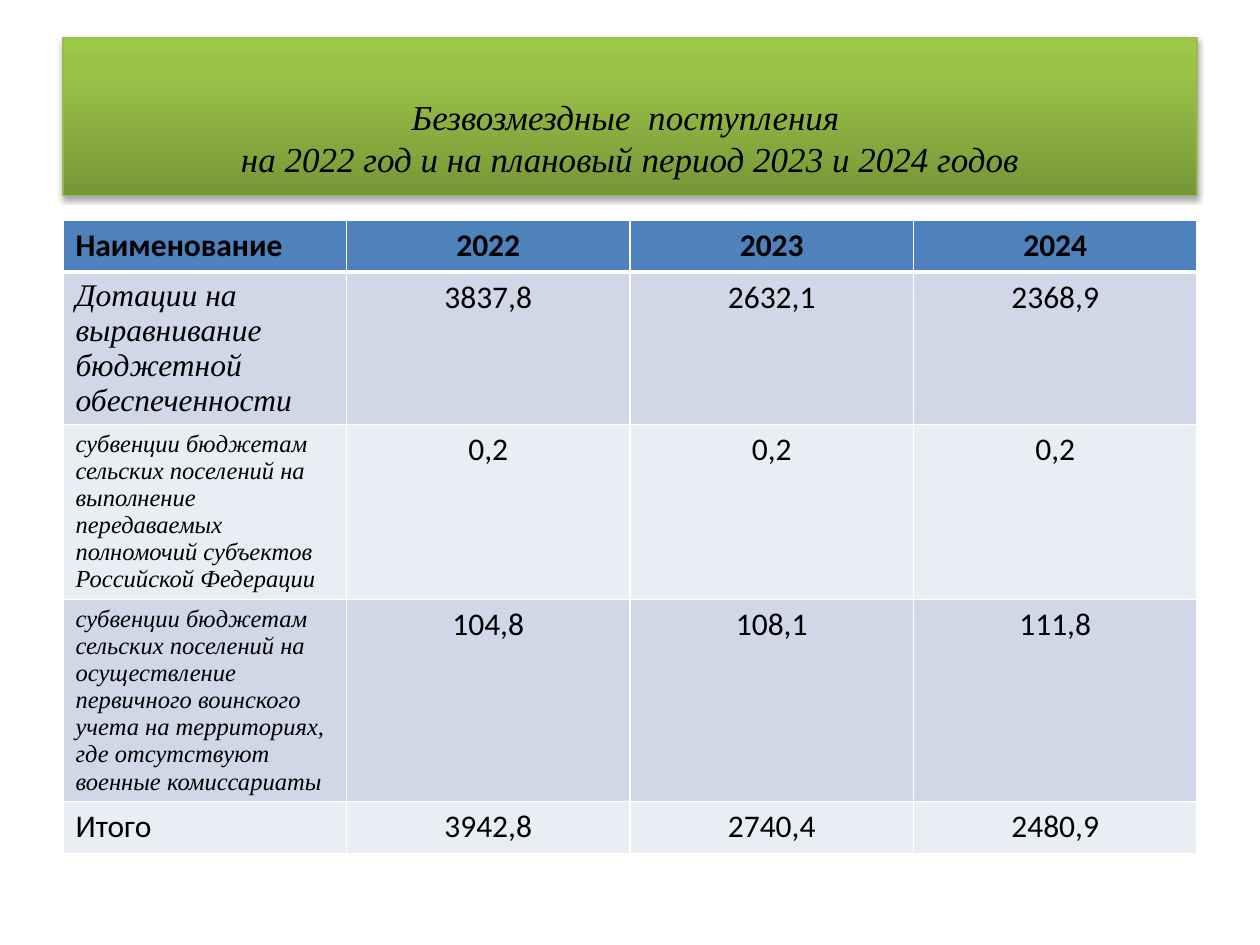
from lxml import etree
from pptx import Presentation
from pptx.dml.color import RGBColor
from pptx.enum.text import MSO_ANCHOR, PP_ALIGN
from pptx.oxml import parse_xml
from pptx.oxml.ns import qn
from pptx.util import Inches, Pt

CENTER = PP_ALIGN.CENTER
LEFT = PP_ALIGN.LEFT
MIDDLE = MSO_ANCHOR.MIDDLE
NS = 'xmlns:a="http://schemas.openxmlformats.org/drawingml/2006/main"'
SERIF = "Times New Roman"
SANS = "Calibri"
COLORS = {
    "ink": "000000", "white": "FFFFFF", "edge": "98B955",
    "low": "779737", "mid": "9BC348", "high": "9DC746",
    "head": "4F81BD", "odd": "D0D8E8", "even": "E9EDF4",
}
TITLE = ["Безвозмездные  поступления ",
         "на 2022 год и на плановый период 2023 и 2024 годов"]
ROWS = [
    (0.41, SANS, 18, ["Наименование", "2022", "2023", "2024"]),
    (1.19, SERIF, 18, ["Дотации на выравнивание бюджетной обеспеченности",
                       "3837,8", "2632,1", "2368,9"]),
    (1.39, SERIF, 14, ["субвенции бюджетам сельских поселений на выполнение "
                       "передаваемых полномочий субъектов Российской Федерации",
                       "0,2", "0,2", "0,2"]),
    (1.6, SERIF, 14, ["субвенции бюджетам сельских поселений на осуществление "
                      "первичного воинского учета на территориях, "
                      "где отсутствуют военные комиссариаты",
                      "104,8", "108,1", "111,8"]),
    (0.41, SANS, 18, ["Итого", "3942,8", "2740,4", "2480,9"]),
]


class Deck:
    """Holds the style and the current slide."""

    def __init__(self):
        self.file = Presentation()
        self.file.slide_width = Inches(10)
        self.file.slide_height = Inches(7.5)
        self.slide = self.file.slides.add_slide(self.file.slide_layouts[5])

    def run(self, para, text, font, size, bold=False, italic=False):
        run = para.add_run()
        run.text = text
        run.font.name = font
        run.font.size = Pt(size)
        run.font.bold = bold
        run.font.italic = italic
        run.font.color.rgb = RGBColor.from_string(COLORS["ink"])

    def title(self, lines, left, top, width, height):
        shape = self.slide.shapes.title
        shape.left, shape.top = Inches(left), Inches(top)
        shape.width, shape.height = Inches(width), Inches(height)
        stops = "".join(
            f'<a:gs pos="{pos}"><a:srgbClr val="{COLORS[name]}"/></a:gs>'
            for pos, name in [(0, "low"), (80000, "mid"), (100000, "high")])
        props = shape.element.spPr
        props.append(parse_xml(
            f'<a:gradFill {NS} rotWithShape="1"><a:gsLst>{stops}</a:gsLst>'
            '<a:lin ang="16200000" scaled="0"/></a:gradFill>'))
        shape.line.color.rgb = RGBColor.from_string(COLORS["edge"])
        shape.line.width = Pt(0.75)
        props.append(parse_xml(
            f'<a:effectLst {NS}><a:outerShdw blurRad="39370" dist="22860" '
            f'dir="5400000" rotWithShape="0"><a:srgbClr val="{COLORS["ink"]}">'
            '<a:alpha val="35000"/></a:srgbClr></a:outerShdw></a:effectLst>'))
        frame = shape.text_frame
        frame.word_wrap = True
        frame.vertical_anchor = MIDDLE
        frame.margin_top = Inches(0.38)
        para = frame.paragraphs[0]
        para.alignment = CENTER
        for i, line in enumerate(lines):
            if i:
                para.add_line_break()
            self.run(para, line, SERIF, 20, italic=True)

    def border(self, cell, side, width):
        props = cell._tc.get_or_add_tcPr()
        line = etree.SubElement(props, qn(f"a:ln{side}"), w=str(Pt(width)))
        fill = etree.SubElement(line, qn("a:solidFill"))
        etree.SubElement(fill, qn("a:srgbClr"), val=COLORS["white"])

    def cell(self, cell, text, fill, align, font, size, head):
        for side in "LRTB":
            self.border(cell, side, 3 if head and side == "B" else 1)
        cell.fill.solid()
        cell.fill.fore_color.rgb = RGBColor.from_string(COLORS[fill])
        para = cell.text_frame.paragraphs[0]
        para.alignment = align
        self.run(para, text, font, size, head, font == SERIF)

    def table(self, rows, left, top, width):
        count = len(rows[0][3])
        height = sum(row[0] for row in rows)
        table = self.slide.shapes.add_table(
            len(rows), count, Inches(left), Inches(top),
            Inches(width), Inches(height)).table
        for col in table.columns:
            col.width = Inches(width / count)
        for r, (tall, font, size, texts) in enumerate(rows):
            table.rows[r].height = Inches(tall)
            fill = "head" if r == 0 else "odd" if r % 2 else "even"
            for c, text in enumerate(texts):
                look = (CENTER, SANS, 18) if c else (LEFT, font, size)
                self.cell(table.cell(r, c), text, fill, *look, r == 0)


def main():
    deck = Deck()
    deck.title(TITLE, 0.5, 0.3, 9, 1.25)
    deck.table(ROWS, 0.5, 1.75, 9)
    deck.file.save("out.pptx")


if __name__ == "__main__":
    main()
